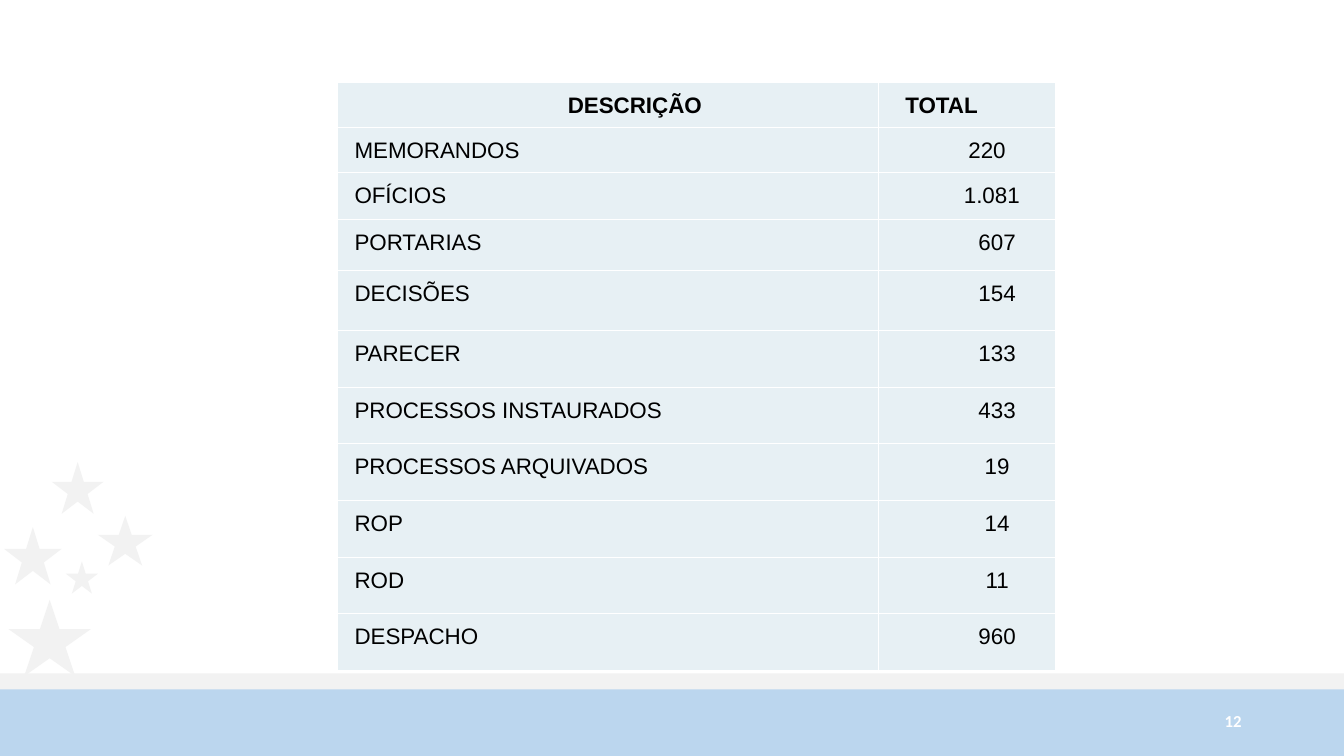
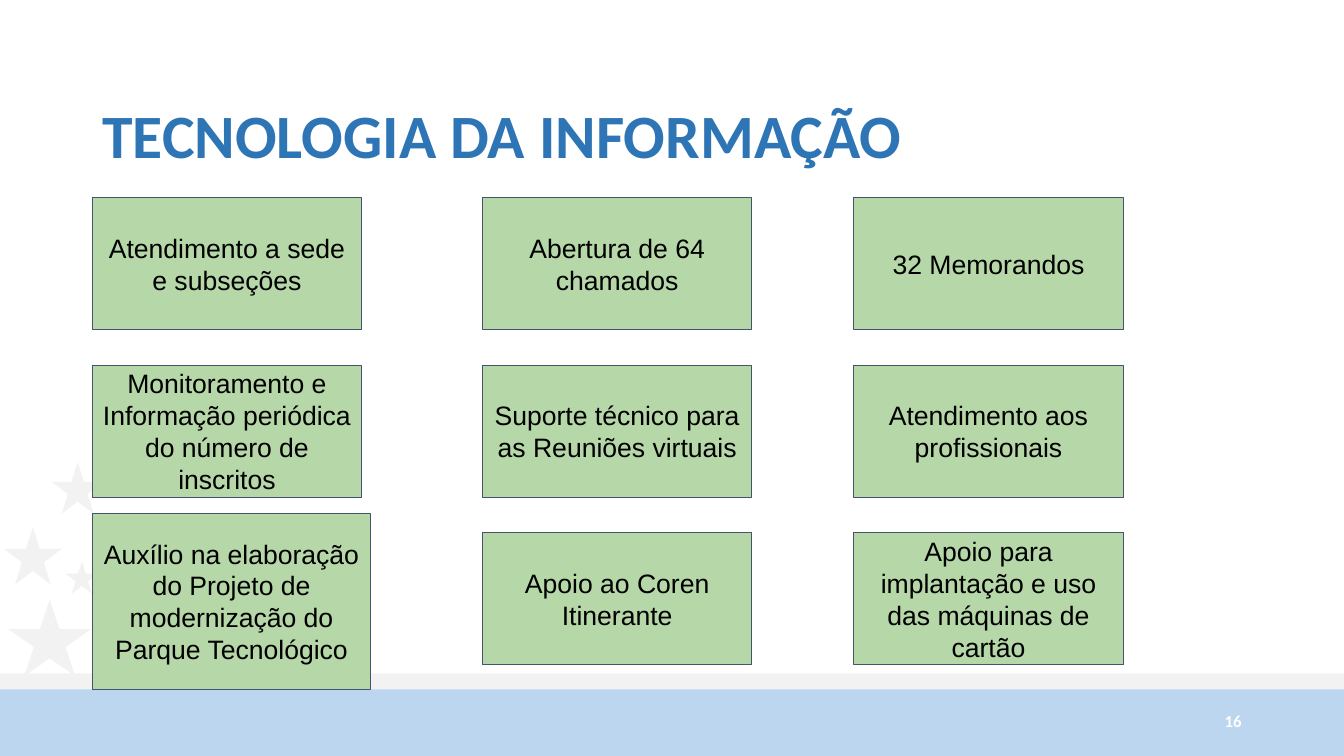
"""Build two report slides: a table of documents issued and a grid of IT activities."""
from lxml import etree
from pptx import Presentation
from pptx.dml.color import RGBColor
from pptx.enum.shapes import MSO_SHAPE
from pptx.enum.text import MSO_ANCHOR, MSO_AUTO_SIZE, PP_ALIGN
from pptx.oxml.ns import qn
from pptx.util import Pt

RECTANGLE, STAR = MSO_SHAPE.RECTANGLE, MSO_SHAPE.STAR_5_POINT
LEFT, CENTER, RIGHT = PP_ALIGN.LEFT, PP_ALIGN.CENTER, PP_ALIGN.RIGHT
MIDDLE = MSO_ANCHOR.MIDDLE
NO_FIT = MSO_AUTO_SIZE.NONE

WHITE, BLACK, GRAY = "FFFFFF", "000000", "F2F2F2"
BAND_BLUE, TITLE_BLUE = "BBD6EE", "2E75B5"
CELL_BLUE, BOX_GREEN, BOX_LINE = "E7F0F4", "B6D7A8", "44546A"

DECORATIONS = [
    (RECTANGLE, 0, 491, 960, 49, BAND_BLUE),
    (RECTANGLE, 0, 481, 960, 11.5, GRAY),
    (STAR, 3, 376.5, 41, 41, GRAY),
    (STAR, 47, 401, 23, 23, GRAY),
    (STAR, 6, 428.5, 59, 54.5, GRAY),
    (STAR, 37, 330, 37, 37, GRAY),
    (STAR, 70, 368.5, 39, 35.5, GRAY),
]


def color(value):
    return RGBColor.from_string(value)


def write(frame, text, font, size, ink, align, bold=False):
    frame.word_wrap = True
    para = frame.paragraphs[0]
    para.text = text
    para.alignment = align
    para.font.name = font
    para.font.size = Pt(size)
    para.font.bold = bold
    para.font.color.rgb = color(ink)
    return para


deck = Presentation()
deck.slide_width, deck.slide_height = Pt(960), Pt(540)
blank_layout, title_layout = deck.slide_layouts[6], deck.slide_layouts[5]
table_page = deck.slides.add_slide(blank_layout)
grid_page = deck.slides.add_slide(title_layout)

for page, number in ((table_page, "12"), (grid_page, "16")):
    for kind, left, top, width, height, fill in DECORATIONS:
        shape = page.shapes.add_shape(kind, Pt(left), Pt(top), Pt(width), Pt(height))
        shape.shadow.inherit = False
        shape.fill.solid()
        shape.fill.fore_color.rgb = color(fill)
        shape.line.fill.background()
    number_box = page.shapes.add_textbox(Pt(678), Pt(500.5), Pt(216), Pt(28.75))
    number_box.text_frame.vertical_anchor = MIDDLE
    write(number_box.text_frame, number, "Calibri", 12, WHITE, RIGHT, True)

TABLE_ROWS = [
    ("DESCRIÇÃO", "TOTAL", 31.5, 14),
    ("MEMORANDOS", "220", 31.5, 28),
    ("OFÍCIOS", "1.081", 33.5, 35),
    ("PORTARIAS", "607", 36.5, 42.5),
    ("DECISÕES", "154", 43, 42.5),
    ("PARECER", "133", 40.5, 42.5),
    ("PROCESSOS INSTAURADOS", "433", 40.5, 42.5),
    ("PROCESSOS ARQUIVADOS", "19", 40.5, 42.5),
    ("ROP", "14", 40.5, 42.5),
    ("ROD", "11", 40.5, 42.5),
    ("DESPACHO", "960", 40.5, 42.5),
]
COLUMN_WIDTHS = (386.5, 126.5)
table_height = sum(height for _, _, height, _ in TABLE_ROWS)
table = table_page.shapes.add_table(
    len(TABLE_ROWS), 2, Pt(241.25), Pt(59), Pt(sum(COLUMN_WIDTHS)), Pt(table_height)
).table
table.first_row = table.horz_banding = False
for column, width in zip(table.columns, COLUMN_WIDTHS):
    column.width = Pt(width)

for row, (label, total, height, total_indent) in enumerate(TABLE_ROWS):
    table.rows[row].height = Pt(height)
    header = row == 0
    columns = (
        (label, CENTER if header else LEFT, 38 if header else 7),
        (total, LEFT if header else CENTER, total_indent),
    )
    for column, (text, align, indent) in enumerate(columns):
        cell = table.cell(row, column)
        cell.margin_left = cell.margin_right = Pt(5)
        cell.margin_top = cell.margin_bottom = Pt(5)
        para = write(cell.text_frame, text, "Arial", 16, BLACK, align, header)
        para.line_spacing = 1.15
        properties = para._p.get_or_add_pPr()
        properties.set("marL", "0")
        properties.set("indent", str(Pt(indent)))
        borders = cell._tc.get_or_add_tcPr()
        for side in ("a:lnL", "a:lnR", "a:lnT", "a:lnB"):
            border = etree.SubElement(borders, qn(side), w=str(Pt(1)))
            fill = etree.SubElement(border, qn("a:solidFill"))
            etree.SubElement(fill, qn("a:srgbClr"), val=WHITE)
        cell.fill.solid()
        cell.fill.fore_color.rgb = color(CELL_BLUE)

title = grid_page.shapes.title
title.left, title.top, title.width, title.height = Pt(66), Pt(46.5), Pt(828), Pt(104.5)
title.text_frame.auto_size = NO_FIT
title.text_frame.vertical_anchor = MIDDLE
para = write(title.text_frame, "TECNOLOGIA DA INFORMAÇÃO", "Calibri", 44, TITLE_BLUE, LEFT, True)
para.line_spacing = 0.9

ACTIVITIES = [
    ("Atendimento a sede e subseções", "Abertura de 64 chamados", "32 Memorandos"),
    (
        "Monitoramento e Informação periódica do número de inscritos",
        "Suporte técnico para as Reuniões virtuais",
        "Atendimento aos profissionais",
    ),
    (
        "Auxílio na elaboração do Projeto de modernização do Parque Tecnológico",
        "Apoio ao Coren Itinerante",
        "Apoio para implantação e uso das máquinas de cartão",
    ),
]
COLUMN_LEFTS = (66, 344.75, 610)
GRID_TOP, ROW_STEP = 141, 119.75
for row, activities in enumerate(ACTIVITIES):
    for column, (left, text) in enumerate(zip(COLUMN_LEFTS, activities)):
        top, width, height = GRID_TOP + row * ROW_STEP, 192.25, 94.5
        if (row, column) == (2, 0):
            top, width, height = 366.5, 198.75, 126
        box = grid_page.shapes.add_shape(RECTANGLE, Pt(left), Pt(top), Pt(width), Pt(height))
        box.shadow.inherit = False
        box.fill.solid()
        box.fill.fore_color.rgb = color(BOX_GREEN)
        box.line.color.rgb = color(BOX_LINE)
        box.line.width = Pt(0.75)
        frame = box.text_frame
        frame.margin_left = frame.margin_right = Pt(7.2)
        frame.margin_top = frame.margin_bottom = Pt(7.2)
        frame.vertical_anchor = MIDDLE
        write(frame, text, "Arial", 19, BLACK, CENTER)

deck.save("out.pptx")
